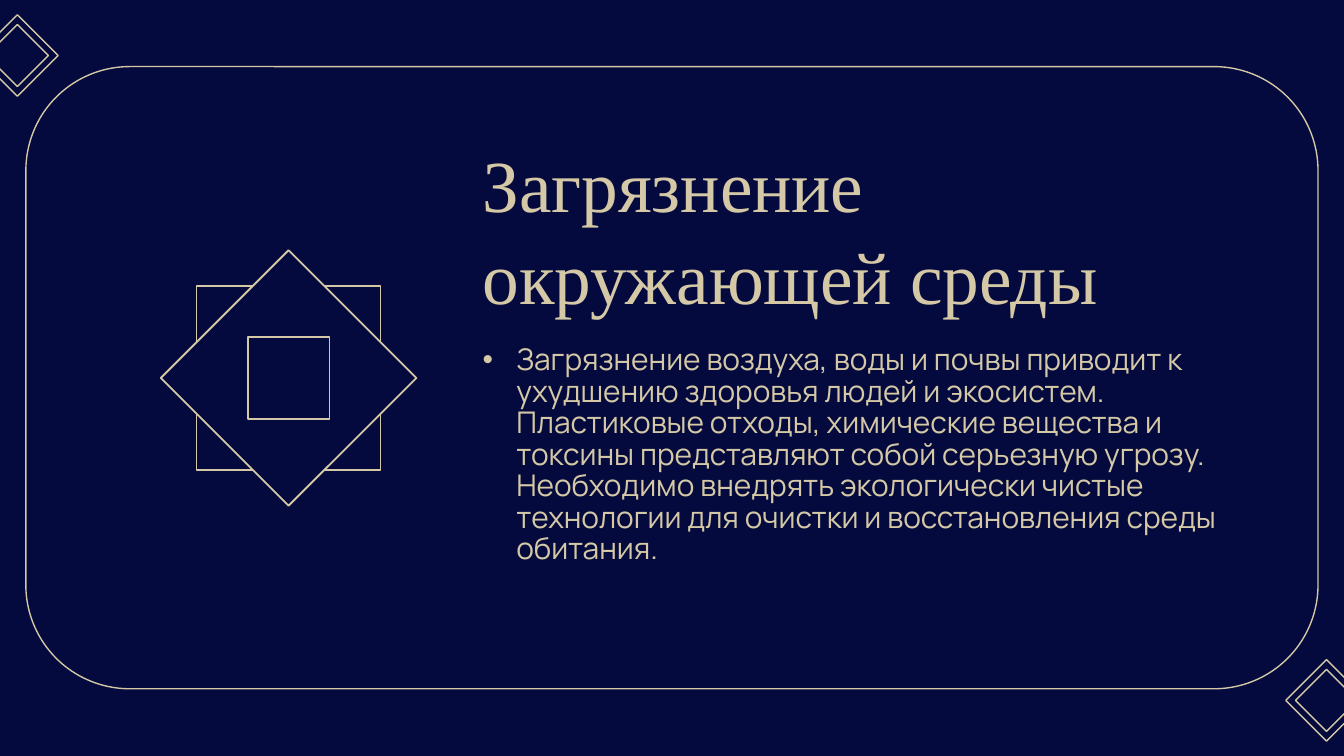
from dataclasses import dataclass

from lxml.etree import SubElement
from pptx import Presentation
from pptx.dml.color import RGBColor
from pptx.enum.shapes import MSO_SHAPE as Preset
from pptx.enum.text import MSO_ANCHOR as Anchor, PP_ALIGN as Align
from pptx.oxml.ns import qn
from pptx.util import Cm, Pt


@dataclass(frozen=True)
class Theme:
    night: RGBColor = RGBColor(0x04, 0x0A, 0x3D)
    sand: RGBColor = RGBColor(0xD4, 0xC8, 0xA6)
    title_font: str = "Times New Roman"
    body_font: str = "Manrope"
    title_size: float = 39.3
    body_size: float = 16
    thin: float = 0.75
    medium: float = 1


THEME = Theme()
WIDTH, HEIGHT = 25.4, 14.29


def add_outline(slide, preset, box, weight, fill=None):
    """Outlined shape; box is left, top, width, height in cm."""
    outline = slide.shapes.add_shape(preset, *map(Cm, box))
    outline.shadow.inherit = False
    if fill is None:
        outline.fill.background()
    else:
        outline.fill.solid()
        outline.fill.fore_color.rgb = fill
    outline.line.color.rgb = THEME.sand
    outline.line.width = Pt(weight)
    return outline


def add_text(slide, text, box, *, font, size, spacing=1.0,
             anchor=Anchor.TOP, bullet_indent=None):
    frame = slide.shapes.add_textbox(*map(Cm, box)).text_frame
    frame.word_wrap = True
    frame.vertical_anchor = anchor
    frame.margin_left = frame.margin_right = Cm(0.25)
    frame.margin_top = frame.margin_bottom = Cm(0.25)
    paragraph = frame.paragraphs[0]
    paragraph.alignment = Align.LEFT
    paragraph.line_spacing = spacing
    run = paragraph.add_run()
    run.text = text
    run.font.name = font
    run.font.size = Pt(size)
    run.font.color.rgb = THEME.sand
    if bullet_indent:
        properties = paragraph._p.get_or_add_pPr()
        properties.set("marL", str(Cm(bullet_indent)))
        properties.set("indent", str(-Cm(bullet_indent)))
        SubElement(properties, qn("a:buFont"), typeface="Arial")
        SubElement(properties, qn("a:buChar"), char="•")


def add_nested(slide, box, layers):
    """Concentric shapes; each layer is preset, share of the box, weight, fill."""
    left, top, width, height = box
    for preset, share, weight, fill in layers:
        inset = (1 - share) / 2
        inner_box = (left + width * inset, top + height * inset,
                     width * share, height * share)
        add_outline(slide, preset, inner_box, weight, fill)


def add_frame(slide, box):
    frame = add_outline(slide, Preset.ROUNDED_RECTANGLE, box, THEME.thin)
    frame.adjustments[0] = 0.167


def add_corner_ornament(slide, box):
    add_nested(slide, box, [(Preset.DIAMOND, share, THEME.thin, None)
                            for share in (1, 0.76)])


def add_star(slide, box):
    add_nested(slide, box, [
        (Preset.RECTANGLE, 0.72, THEME.medium, THEME.night),
        (Preset.DIAMOND, 1, THEME.medium, THEME.night),
        (Preset.RECTANGLE, 0.32, THEME.medium, THEME.night),
    ])


def add_topic(slide, box):
    left, top, width, height = box
    title_height = 2.22
    # Heading, growing upwards from its lower edge
    add_text(slide, "Загрязнение окружающей среды",
             (left, top, width, title_height), font=THEME.title_font,
             size=THEME.title_size, spacing=1.04, anchor=Anchor.BOTTOM)
    # Explanation
    add_text(slide,
             "Загрязнение воздуха, воды и почвы приводит к ухудшению здоровья "
             "людей и экосистем. Пластиковые отходы, химические вещества и "
             "токсины представляют собой серьезную угрозу. Необходимо внедрять "
             "экологически чистые технологии для очистки и восстановления "
             "среды обитания.",
             (left, top + title_height, width, height - title_height),
             font=THEME.body_font, size=THEME.body_size, spacing=0.88,
             bullet_indent=0.64)


def main():
    deck = Presentation()
    deck.slide_width, deck.slide_height = Cm(WIDTH), Cm(HEIGHT)
    slide = deck.slides.add_slide(deck.slide_layouts[6])
    slide.background.fill.solid()
    slide.background.fill.fore_color.rgb = THEME.night

    # Frame and corner ornaments, mirrored through the slide centre
    add_frame(slide, (0.49, 1.26, 24.42, 11.76))
    ornament, left, top = 1.54, -0.44, 0.28
    add_corner_ornament(slide, (WIDTH - left - ornament,
                                HEIGHT - top - ornament, ornament, ornament))
    add_corner_ornament(slide, (left, top, ornament, ornament))

    # Content
    add_topic(slide, (8.87, 4.06, 15.06, 6.71))
    add_star(slide, (3.04, 4.73, 4.83, 4.83))

    deck.save("out.pptx")


if __name__ == "__main__":
    main()
